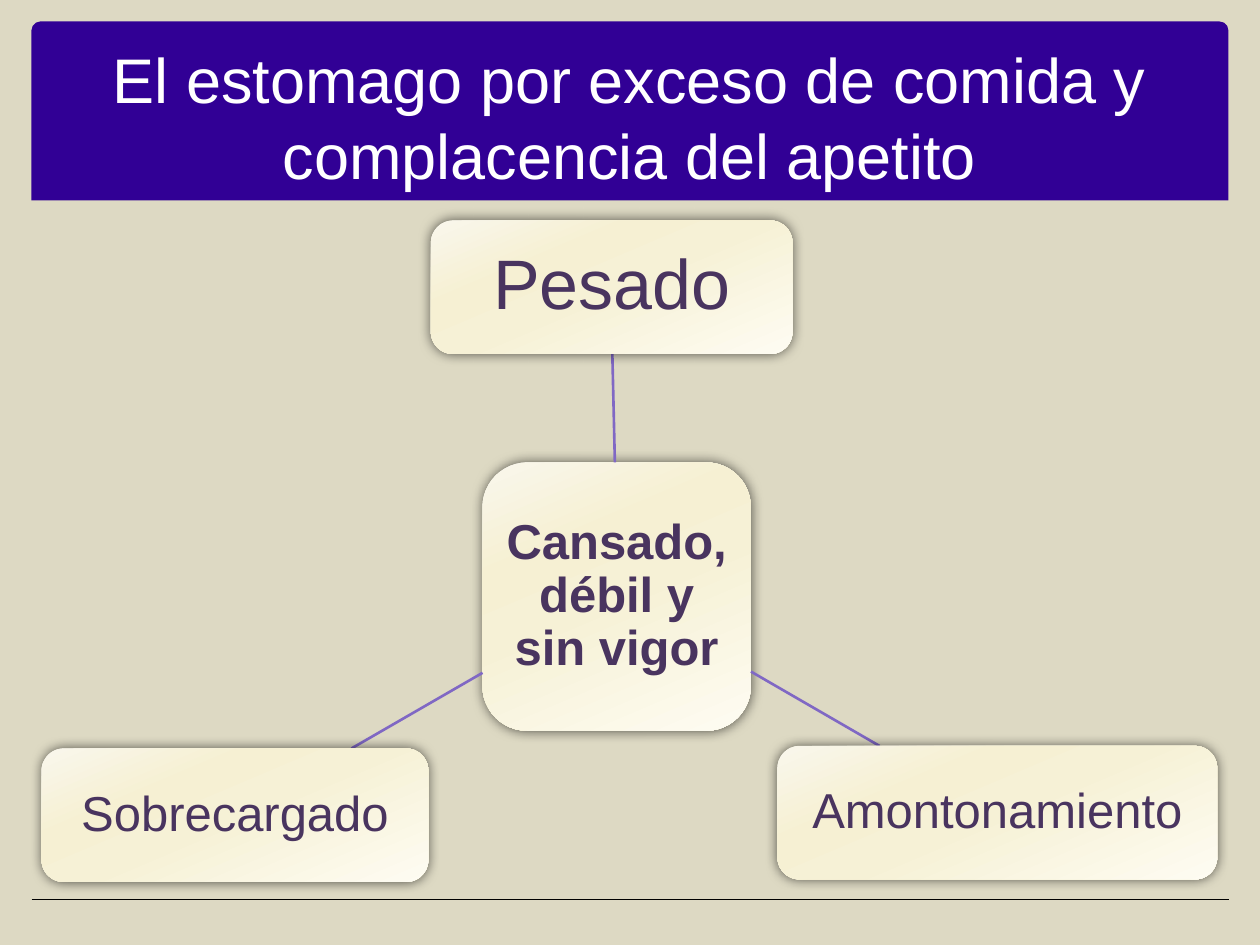
from dataclasses import dataclass
from typing import NamedTuple

from lxml import etree
from pptx import Presentation
from pptx import util as u
from pptx.dml.color import RGBColor
from pptx.enum import shapes, text
from pptx.oxml import ns


@dataclass(frozen=True)
class Theme:
    font: str = "Arial"
    backdrop: str = "DDD9C3"
    banner: str = "310095"
    banner_text: str = "FFFFFF"
    rule: str = "000000"
    link: str = "8068C4"
    node_text: str = "49345F"
    node_stops: tuple = ((0, "F9F7EC"), (30, "F6F0D3"), (50, "F6F1D6"), (100, "FEFCF2"))
    node_angle: int = 67
    title_size: int = 36
    large_size: int = 40
    node_size: int = 28


class Area(NamedTuple):
    """Left, top, width and height in grid columns and rows."""
    left: float
    top: float
    width: float
    height: float


class Node(NamedTuple):
    label: str
    area: Area
    size: int
    bold: bool = False


class Link(NamedTuple):
    """Start and end in grid columns and rows."""
    x1: float
    y1: float
    x2: float
    y2: float


THEME = Theme()
COLUMNS, ROWS = 40, 30
CELL = u.Inches(10) // COLUMNS
NODE_HEIGHT = 4.24

HUB = Node("Cansado, débil y sin vigor", Area(15.32, 14.68, 8.52, 8.52), THEME.node_size, True)
NODES = (
    Node("Pesado", Area(13.68, 7, 11.48, NODE_HEIGHT), THEME.large_size),
    Node("Amontonamiento", Area(24.68, 23.68, 13.96, NODE_HEIGHT), THEME.node_size),
    Node("Sobrecargado", Area(1.32, 23.76, 12.28, NODE_HEIGHT), THEME.node_size),
)
LINKS = (
    Link(19.52, 14.68, 19.44, 11.24),
    Link(23.84, 21.32, 27.92, 23.68),
    Link(15.32, 21.36, 11.16, 23.76),
)


def grid(values: tuple) -> list[int]:
    return [round(value * CELL) for value in values]


def rgb(color: str) -> RGBColor:
    return RGBColor.from_string(color)


def add_color(parent, color: str):
    return etree.SubElement(parent, ns.qn("a:srgbClr"), val=color)


def write(box, words: str, size: int, color: str, bold: bool = False) -> None:
    frame = box.text_frame
    frame.word_wrap = True
    frame.vertical_anchor = text.MSO_ANCHOR.MIDDLE
    para = frame.paragraphs[0]
    para.text = words
    para.alignment = text.PP_ALIGN.CENTER
    para.font.name = THEME.font
    para.font.size = u.Pt(size)
    para.font.bold = bold
    para.font.color.rgb = rgb(color)


def draw_line(page, link: Link, color: str, width: float) -> None:
    line = page.shapes.add_connector(shapes.MSO_CONNECTOR.STRAIGHT, *grid(link))
    line.line.color.rgb = rgb(color)
    line.line.width = u.Pt(width)
    etree.SubElement(line._element.spPr, ns.qn("a:effectLst"))


def draw_node(page, node: Node) -> None:
    box = page.shapes.add_shape(shapes.MSO_SHAPE.ROUNDED_RECTANGLE, *grid(node.area))
    box.line.fill.background()
    properties = box._element.spPr

    # Four-stop gradient; python-pptx measures angles counter-clockwise
    box.fill.gradient()
    box.fill.gradient_angle = 360 - THEME.node_angle
    stops = properties.find(".//" + ns.qn("a:gsLst"))
    for stop in list(stops):
        stops.remove(stop)
    for share, color in THEME.node_stops:
        add_color(etree.SubElement(stops, ns.qn("a:gs"), pos=str(share * 1000)), color)

    # Soft glow-like shadow
    box.shadow.inherit = False
    effects = properties.find(ns.qn("a:effectLst"))
    shadow = etree.SubElement(effects, ns.qn("a:outerShdw"), blurRad=str(u.Pt(7.1)),
                              dist="0", dir="0", rotWithShape="0")
    etree.SubElement(add_color(shadow, "000000"), ns.qn("a:alpha"), val="60000")

    frame = box.text_frame
    frame.margin_left = frame.margin_right = u.Inches(0.07)
    frame.margin_top = frame.margin_bottom = u.Inches(0.08)
    write(box, node.label, node.size, THEME.node_text, node.bold)
    frame.paragraphs[0].line_spacing = 0.9


def draw_heading(page) -> None:
    banner = page.shapes.add_shape(shapes.MSO_SHAPE.ROUND_2_SAME_RECTANGLE,
                                   *grid(Area(1, 0.68, 38, 5.68)))
    banner.adjustments[0] = 0.05
    banner.adjustments[1] = 0
    banner.fill.solid()
    banner.fill.fore_color.rgb = rgb(THEME.banner)
    banner.line.fill.background()
    banner.shadow.inherit = False
    title = page.shapes.add_textbox(*grid(Area(1.32, 1.2, 37.32, 5)))
    write(title, "El estomago por exceso de comida y complacencia del apetito",
          THEME.title_size, THEME.banner_text)


def main() -> None:
    deck = Presentation()
    deck.slide_width, deck.slide_height = COLUMNS * CELL, ROWS * CELL
    page = deck.slides.add_slide(deck.slide_layouts[6])
    page.background.fill.solid()
    page.background.fill.fore_color.rgb = rgb(THEME.backdrop)

    # Heading and footer rule
    draw_heading(page)
    draw_line(page, Link(1, 28.56, 39, 28.56), THEME.rule, 1)

    # Hub with its three linked nodes
    draw_node(page, HUB)
    for link, node in zip(LINKS, NODES):
        draw_line(page, link, THEME.link, 1.5)
        draw_node(page, node)

    deck.save("out.pptx")


if __name__ == "__main__":
    main()
